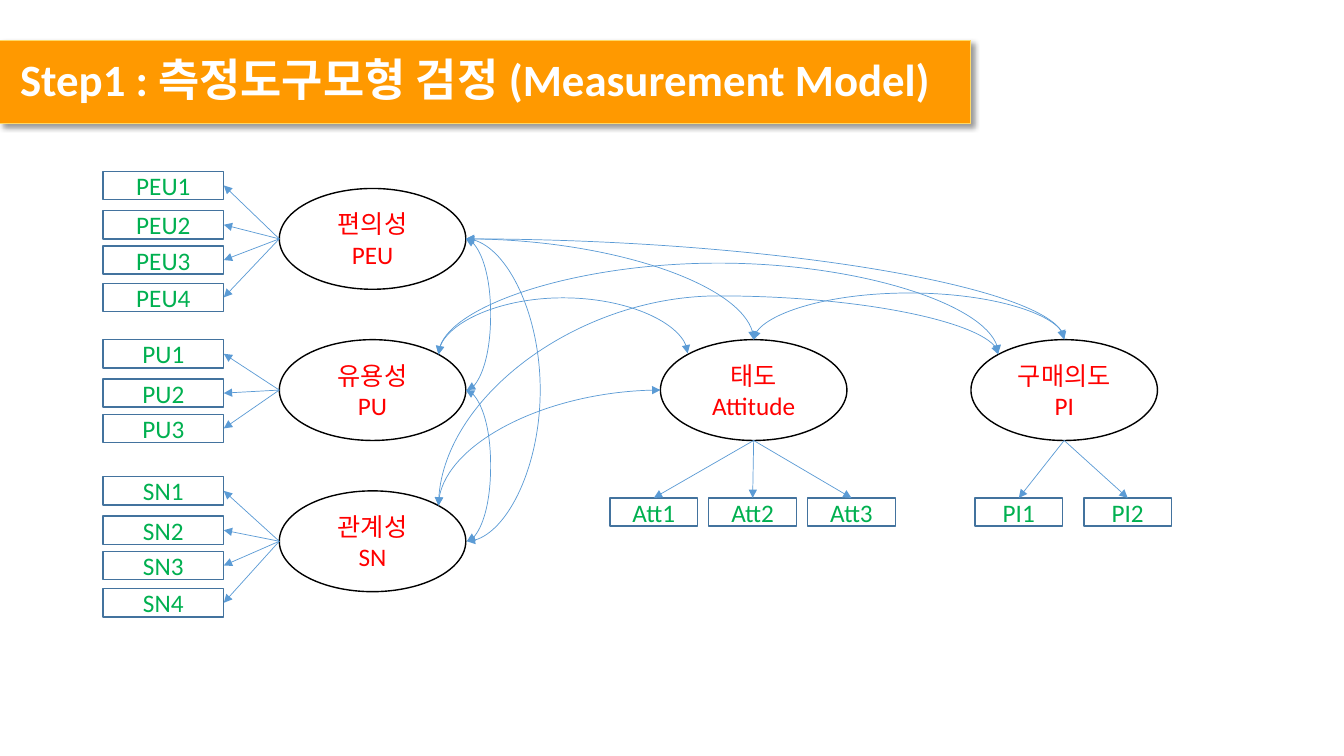
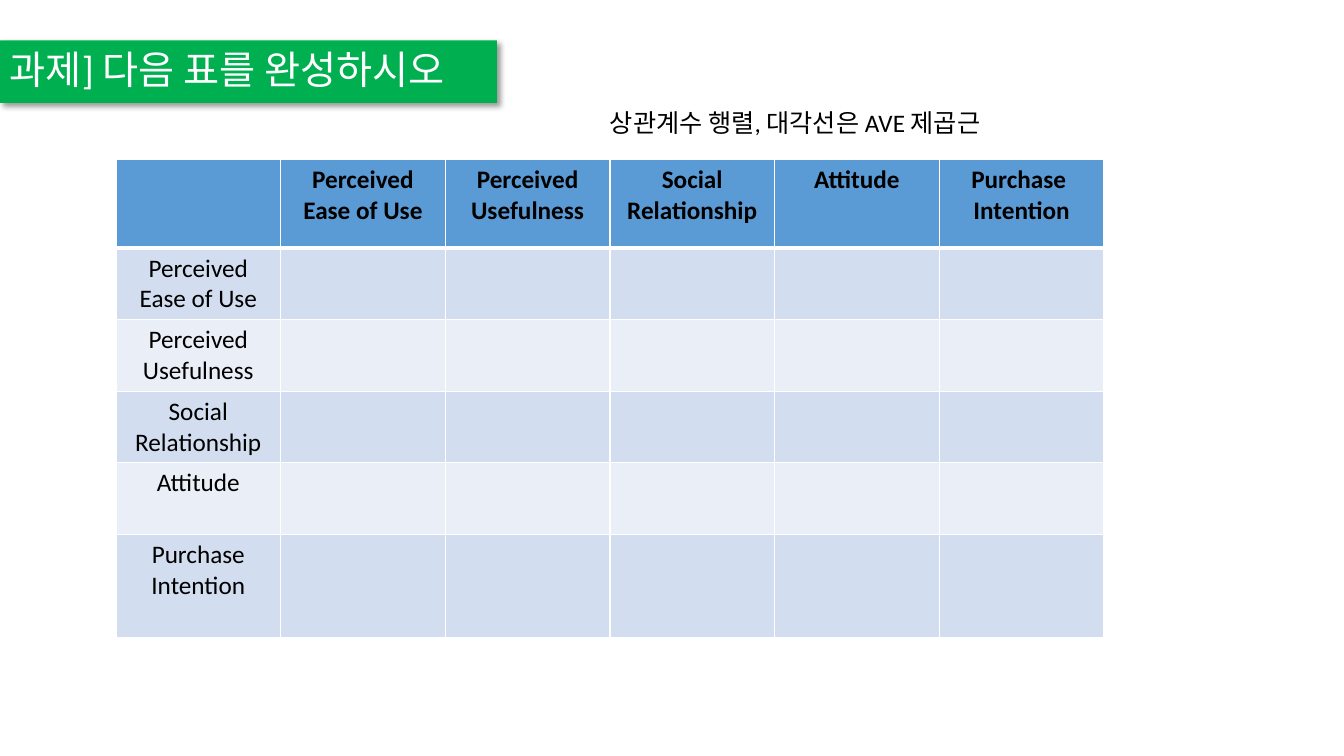
import pptx
import pptx.util
import pptx.dml.color
import pptx.enum.shapes
import pptx.enum.text
import pptx.oxml
import pptx.oxml.ns
import lxml.etree

Inches = pptx.util.Inches
Pt = pptx.util.Pt
qn = pptx.oxml.ns.qn
Shape = pptx.enum.shapes.MSO_SHAPE
Connector = pptx.enum.shapes.MSO_CONNECTOR
Align = pptx.enum.text.PP_ALIGN
Anchor = pptx.enum.text.MSO_ANCHOR

SITES = {
    "top": (0, 0.5, 0),
    "top left": (1, 0.1464, 0.1464),
    "left": (2, 0, 0.5),
    "bottom": (4, 0.5, 1),
    "right": (6, 1, 0.5),
    "top right": (7, 0.8536, 0.1464),
}


def color(value):
    return pptx.dml.color.RGBColor.from_string(value)


def add_node(parent, tag, **attributes):
    node = lxml.etree.SubElement(parent, qn(tag))
    for key, value in attributes.items():
        node.set(key, str(value))
    return node


def site_point(oval, site):
    index, across, down = SITES[site]
    return int(oval.left + oval.width * across), int(oval.top + oval.height * down)


class Designer:
    font = "Calibri"
    white = "FFFFFF"
    black = "000000"
    blue = "5B9BD5"
    factor_text = "FF0000"
    item_text = "00B050"
    item_line = "43739E"
    bands = ("D2DEEF", "EAEFF7")

    def __init__(self):
        self.deck = pptx.Presentation()
        self.deck.slide_width = Inches(13.33)
        self.deck.slide_height = Inches(7.5)
        self.page = None

    def new_page(self):
        self.page = self.deck.slides.add_slide(self.deck.slide_layouts[6])

    def fill_text(self, frame, text, ink, size=18, bold=False, align=Align.CENTER, spacing=None):
        for number, line in enumerate(text.split("\n")):
            para = frame.add_paragraph() if number else frame.paragraphs[0]
            span = para.add_run()
            span.text = line
            para_format = {"alignment": align, "line_spacing": spacing}
            font_format = {"name": self.font, "size": Pt(size), "bold": bold}
            for target, values in ((para, para_format), (span.font, font_format)):
                for key, value in values.items():
                    setattr(target, key, value)
            span.font.color.rgb = color(ink)

    def box(self, kind, place, fill=None, line=None, width=1):
        box = self.page.shapes.add_shape(kind, *map(Inches, place))
        box.shadow.inherit = False
        if fill:
            box.fill.solid()
            box.fill.fore_color.rgb = color(fill)
        else:
            box.fill.background()
        if line:
            box.line.color.rgb = color(line)
            box.line.width = Pt(width)
        else:
            box.line.fill.background()
        box.text_frame.word_wrap = True
        box.text_frame.vertical_anchor = Anchor.MIDDLE
        return box

    def title(self, text, width, height, fill, size, bold=False, line=None):
        band = self.box(Shape.RECTANGLE, (0, 0.4, width, height), fill, line, 0.75)
        effects = band._element.spPr.find(qn("a:effectLst"))
        shadow = add_node(effects, "a:outerShdw", blurRad=Pt(4), dist=Pt(3),
                          dir=2700000, algn="tl", rotWithShape=0)
        shade = add_node(shadow, "a:srgbClr", val=self.black)
        add_node(shade, "a:alpha", val=40000)
        self.fill_text(band.text_frame, text, self.white, size, bold, Align.LEFT, 0.9)

    def factor(self, left, top, text):
        oval = self.box(Shape.OVAL, (left, top, 1.85, 1), line=self.black)
        self.fill_text(oval.text_frame, text, self.factor_text)
        return oval

    def item(self, left, top, width, text):
        box = self.box(Shape.RECTANGLE, (left, top, width, 0.28), line=self.item_line)
        self.fill_text(box.text_frame, text, self.item_text)
        return box

    def connector(self, kind, start, end, heads):
        link = self.page.shapes.add_connector(kind, *start, *end)
        link.line.color.rgb = color(self.blue)
        link.line.width = Pt(0.5)
        for head in heads:
            add_node(link.line._get_or_add_ln(), head, type="triangle")
        add_node(link._element.spPr, "a:effectLst")
        return link

    def glue(self, link, tag, oval, site):
        add_node(link._element.nvCxnSpPr.cNvCxnSpPr, tag,
                 id=oval.shape_id, idx=SITES[site][0])

    def arrow(self, oval, site, box, box_site):
        start = site_point(oval, site)
        link = self.connector(Connector.STRAIGHT, start, start, ["a:tailEnd"])
        self.glue(link, "a:stCxn", oval, site)
        link.end_connect(box, box_site)

    def curve(self, first, first_site, second, second_site, bend=None):
        start = site_point(first, first_site)
        end = site_point(second, second_site)
        upward = first_site.startswith("top")
        across = end[0] - start[0]
        rise = start[1] - end[1]
        if upward:
            rise = max(rise, Inches(0.01))
            left = start[0] + (across - rise) // 2
            top = start[1] - (rise + across) // 2
            start, end = (left, top), (left + rise, top + across)
        else:
            across = max(across, Inches(0.01))
            end = (start[0] + across, end[1])
        link = self.connector(Connector.CURVE, start, end, ["a:headEnd", "a:tailEnd"])
        self.glue(link, "a:stCxn", first, first_site)
        self.glue(link, "a:endCxn", second, second_site)
        if upward:
            for key, value in {"rot": "5400000", "flipH": "1", "flipV": "1"}.items():
                link._element.spPr.find(qn("a:xfrm")).set(key, value)
        shape = link._element.spPr.find(qn("a:prstGeom"))
        if bend is None:
            shape.set("prst", "curvedConnector2")
        else:
            ratio = Inches(bend) / (rise if upward else across)
            guides = shape.find(qn("a:avLst"))
            if guides is None:
                guides = add_node(shape, "a:avLst")
            add_node(guides, "a:gd", name="adj1", fmla=f"val {round(ratio * 100000)}")

    def label(self, place, text):
        box = self.page.shapes.add_textbox(*map(Inches, place))
        box.text_frame.word_wrap = False
        self.fill_text(box.text_frame, text, self.black, align=Align.LEFT)

    def borders(self, cell, widths):
        properties = cell._tc.get_or_add_tcPr()
        for number, (side, width) in enumerate(widths.items()):
            edge = add_node(properties, f"a:ln{side}", w=Pt(width))
            add_node(add_node(edge, "a:solidFill"), "a:srgbClr", val=self.white)
            properties.insert(number, edge)

    def table(self, left, top, width, heights, rows):
        count = len(rows[0])
        grid = self.page.shapes.add_table(
            len(rows), count, *map(Inches, (left, top, width, sum(heights)))).table
        for column in grid.columns:
            column.width = Inches(width / count)
        for r, texts in enumerate(rows):
            grid.rows[r].height = Inches(heights[r])
            for c, text in enumerate(texts):
                cell = grid.cell(r, c)
                cell.fill.solid()
                cell.fill.fore_color.rgb = color(self.bands[(r - 1) % 2] if r else self.blue)
                self.borders(cell, {"L": 1, "R": 1, "T": 3 if r == 1 else 1,
                                    "B": 1 if r else 3})
                if text:
                    self.fill_text(cell.text_frame, text, self.black, bold=r == 0)


def measurement_model(design):
    design.new_page()
    peu = design.factor(2.77, 1.87, "편의성\nPEU")
    pu = design.factor(2.77, 3.37, "유용성\nPU")
    attitude = design.factor(6.55, 3.37, "태도\nAttitude")
    intention = design.factor(9.63, 3.37, "구매의도\nPI")
    sn = design.factor(2.77, 4.87, "관계성\nSN")

    for oval, name, top, count in ((sn, "SN", 4.73, 4), (pu, "PU", 3.37, 3), (peu, "PEU", 1.7, 4)):
        for number, offset in enumerate((0, 0.39, 0.74, 1.11)[:count], 1):
            box = design.item(1.02, top + offset, 1.2, f"{name}{number}")
            design.arrow(oval, "left", box, 1 + 0)
            box_right = box.left + box.width
            link = design.page.shapes[-1]
            link.end_connect(box, 3)
            assert link.end_x == box_right
    for oval, name, left, step, count in ((attitude, "Att", 6.05, 0.98, 3),
                                          (intention, "PI", 9.67, 1.08, 2)):
        for number in range(count):
            box = design.item(left + number * step, 4.94, 0.87, f"{name}{number + 1}")
            design.arrow(oval, "bottom", box, 0)

    for link in (
        (peu, "right", pu, "right", 0.25),
        (peu, "right", sn, "right", 0.75),
        (pu, "right", sn, "right", 0.25),
        (peu, "right", attitude, "top"),
        (peu, "right", intention, "top"),
        (attitude, "top", intention, "top", 0.47),
        (pu, "top right", attitude, "top left", 0.57),
        (sn, "top right", attitude, "left"),
        (pu, "top right", intention, "top left", 0.92),
        (sn, "top right", intention, "top left", 2.08),
    ):
        design.curve(*link)
    design.title(" Step1 : 측정도구모형 검정 (Measurement Model)", 9.63, 0.83,
                 "FF9900", 32, True, "FFD966")


def correlation_table(design):
    design.new_page()
    design.title("과제] 다음 표를 완성하시오", 4.93, 0.62, "00B050", 28)
    names = ["Perceived Ease of Use", "Perceived Usefulness", "Social Relationship", "Attitude"]
    rows = [["", *names, "Purchase \nIntention"]]
    rows += [[name] + [""] * 5 for name in names + ["Purchase Intention"]]
    design.table(1.15, 1.58, 9.8, [0.88] + [0.71] * 4 + [1.02], rows)
    design.label((5.95, 1.02, 4.18, 0.4), "상관계수 행렬, 대각선은 AVE 제곱근")


def main():
    design = Designer()
    measurement_model(design)
    correlation_table(design)
    design.deck.save("out.pptx")


if __name__ == "__main__":
    main()
